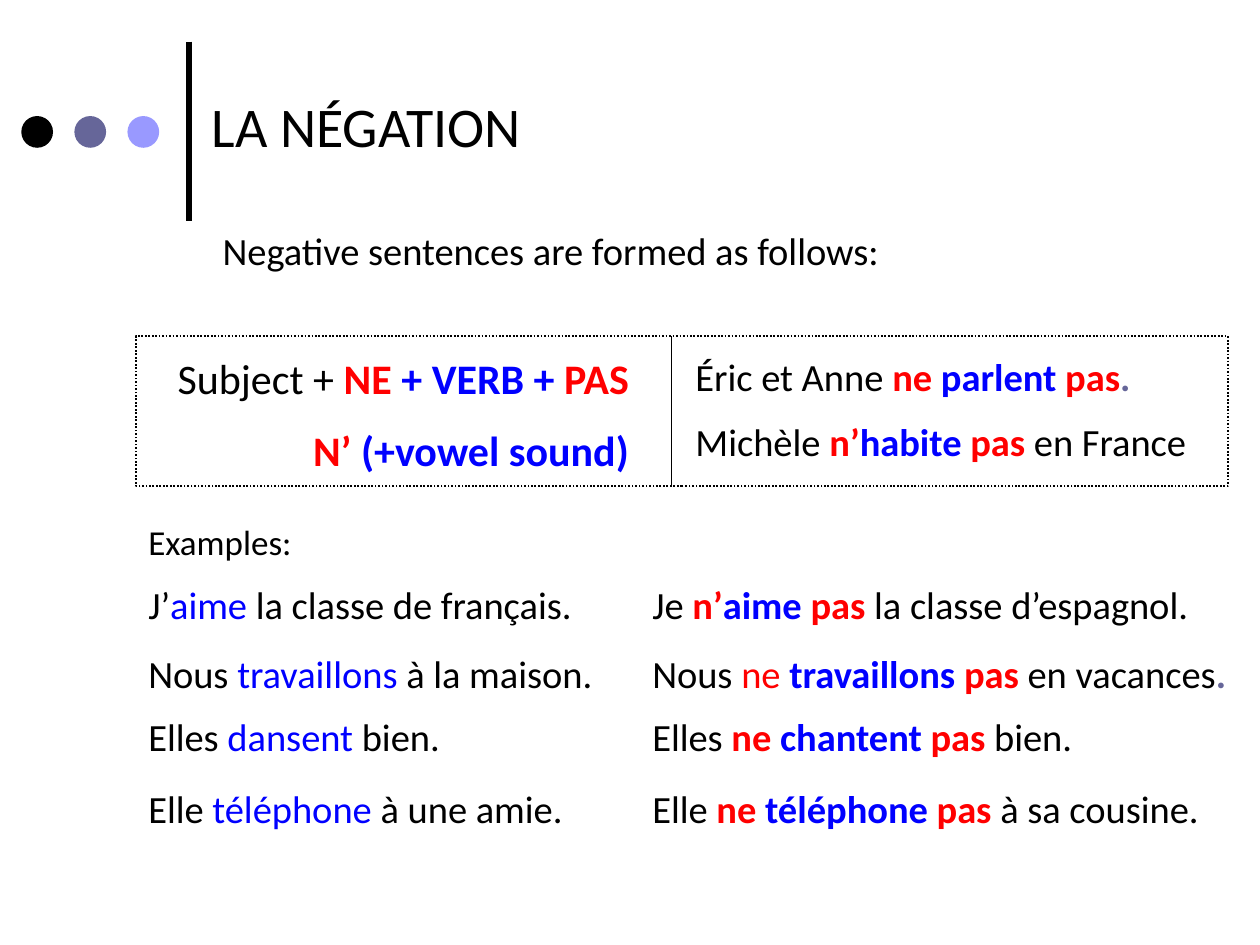
from pptx import Presentation, util as u
from pptx.dml.color import RGBColor
from pptx.enum import dml, shapes, text
from pptx.oxml.ns import qn
from lxml import etree

BLACK, RED, BLUE, SLATE, LILAC = "000000", "FF0000", "0000FF", "666699", "9999FF"


def rgb(value):
    return RGBColor.from_string(value)


def plain(words):
    return words, BLACK, False


def red(words, bold=True):
    return words, RED, bold


def blue(words, bold=True):
    return words, BLUE, bold


FULL_STOP = (".", SLATE, True)


class Deck:
    """Holds the text style and the current slide."""
    font = "Calibri"
    size = 22

    def __init__(self):
        self.prs = Presentation()
        self.prs.slide_width, self.prs.slide_height = u.Cm(25.4), u.Cm(19.05)
        self.slide = self.prs.slides.add_slide(self.prs.slide_layouts[5])

    def style(self, r, size, color, bold=False):
        r.font.name, r.font.size, r.font.bold = self.font, u.Pt(size), bold
        r.font.color.rgb = rgb(color)

    def title(self, words, x, y, w, h):
        sp = self.slide.shapes.title
        sp.left, sp.top, sp.width, sp.height = map(u.Cm, (x, y, w, h))
        tf = sp.text_frame
        tf.text = words
        tf.auto_size = text.MSO_AUTO_SIZE.NONE
        tf.vertical_anchor = text.MSO_ANCHOR.MIDDLE
        p = tf.paragraphs[0]
        p.alignment = text.PP_ALIGN.LEFT
        self.style(p.runs[0], 32, BLACK)

    def text(self, lines, x, y, w, h, size=None, align=text.PP_ALIGN.LEFT):
        """Each line is a list of (words, colour, bold) runs."""
        size = size or self.size
        tf = self.slide.shapes.add_textbox(*map(u.Cm, (x, y, w, h))).text_frame
        tf.word_wrap = True
        tf.auto_size = text.MSO_AUTO_SIZE.SHAPE_TO_FIT_TEXT
        for i, line in enumerate(lines):
            p = tf.add_paragraph() if i else tf.paragraphs[0]
            p.alignment = align
            p.space_before = u.Pt(size / 2 if i else 0)
            for words, color, bold in line:
                r = p.add_run()
                r.text = words
                self.style(r, size, color, bold)

    def dot(self, x, y, d, color):
        sp = self.slide.shapes.add_shape(shapes.MSO_SHAPE.OVAL, *map(u.Cm, (x, y, d, d)))
        sp.shadow.inherit = False
        sp.fill.solid()
        sp.fill.fore_color.rgb = rgb(color)
        sp.line.fill.background()

    def dotted_frame(self, x, y, w, h):
        sp = self.slide.shapes.add_shape(shapes.MSO_SHAPE.RECTANGLE, *map(u.Cm, (x, y, w, h)))
        sp.shadow.inherit = False
        sp.fill.background()
        sp.line.color.rgb = rgb(BLACK)
        sp.line.width = u.Pt(1)
        sp.line.dash_style = dml.MSO_LINE.ROUND_DOT

    def vertical(self, x, top, bottom, width):
        line = self.slide.shapes.add_connector(
            shapes.MSO_CONNECTOR.STRAIGHT, *map(u.Cm, (x, top, x, bottom)))
        line.line.color.rgb = rgb(BLACK)
        line.line.width = u.Pt(width)
        etree.SubElement(line._element.spPr, qn("a:effectLst"))


def main():
    deck = Deck()
    deck.vertical(3.81, 0.84, 4.45, 3)
    for i, color in enumerate((BLACK, SLATE, LILAC)):
        deck.dot(0.43 + i * 1.07, 2.34, 0.64, color)
    deck.title("LA NÉGATION", 4.01, 1.47, 19.48, 2.11)
    deck.text([[plain("Negative sentences are formed as follows:")]], 4.24, 4.45, 16.08, 1.19)

    frame_top, frame_height = 6.78, 3.02
    deck.dotted_frame(2.74, frame_top, 22.02, frame_height)
    deck.vertical(13.54, frame_top, frame_top + frame_height, 0.75)
    deck.text([
        [plain("Subject + "), red("NE"), blue(" + VERB + "), red("PAS")],
        [red("N’"), blue(" (+vowel sound)")],
    ], 2.34, 6.99, 10.59, 2.82, 24, text.PP_ALIGN.RIGHT)
    deck.text([
        [plain("Éric et Anne "), red("ne "), blue("parlent "), red("pas"), FULL_STOP],
        [plain("Michèle "), red("n’"), blue("habite "), red("pas "), plain("en France")],
    ], 13.77, 6.99, 10.8, 2.62)

    left, right = 2.74, 12.9
    deck.text([[plain("Examples:")]], left, 10.36, 5.72, 1.12, 20)
    examples = [
        (11.58, 9.8, [plain("J’"), blue("aime", False), plain(" la classe de français.")],
         11.89, [plain("Je "), red("n’"), blue("aime "), red("pas"),
                 plain(" la classe d’espagnol.")]),
        (12.97, 10.59, [plain("Nous "), blue("travaillons", False), plain(" à la maison.")],
         14.48, [plain("Nous "), red("ne ", False), blue("travaillons "), red("pas "),
                 plain("en vacances"), FULL_STOP]),
        (14.25, 9.73, [plain("Elles "), blue("dansent ", False), plain("bien.")],
         12.42, [plain("Elles "), red("ne "), blue("chantent "), red("pas "), plain("bien.")]),
        (15.7, 9.8, [plain("Elle "), blue("téléphone ", False), plain("à une amie.")],
         13.49, [plain("Elle "), red("ne "), blue("téléphone "), red("pas "),
                 plain("à sa cousine.")]),
    ]
    for y, positive_width, positive, negative_width, negative in examples:
        deck.text([positive], left, y, positive_width, 1.19)
        deck.text([negative], right, y, negative_width, 1.19)

    deck.prs.save("out.pptx")


if __name__ == "__main__":
    main()
